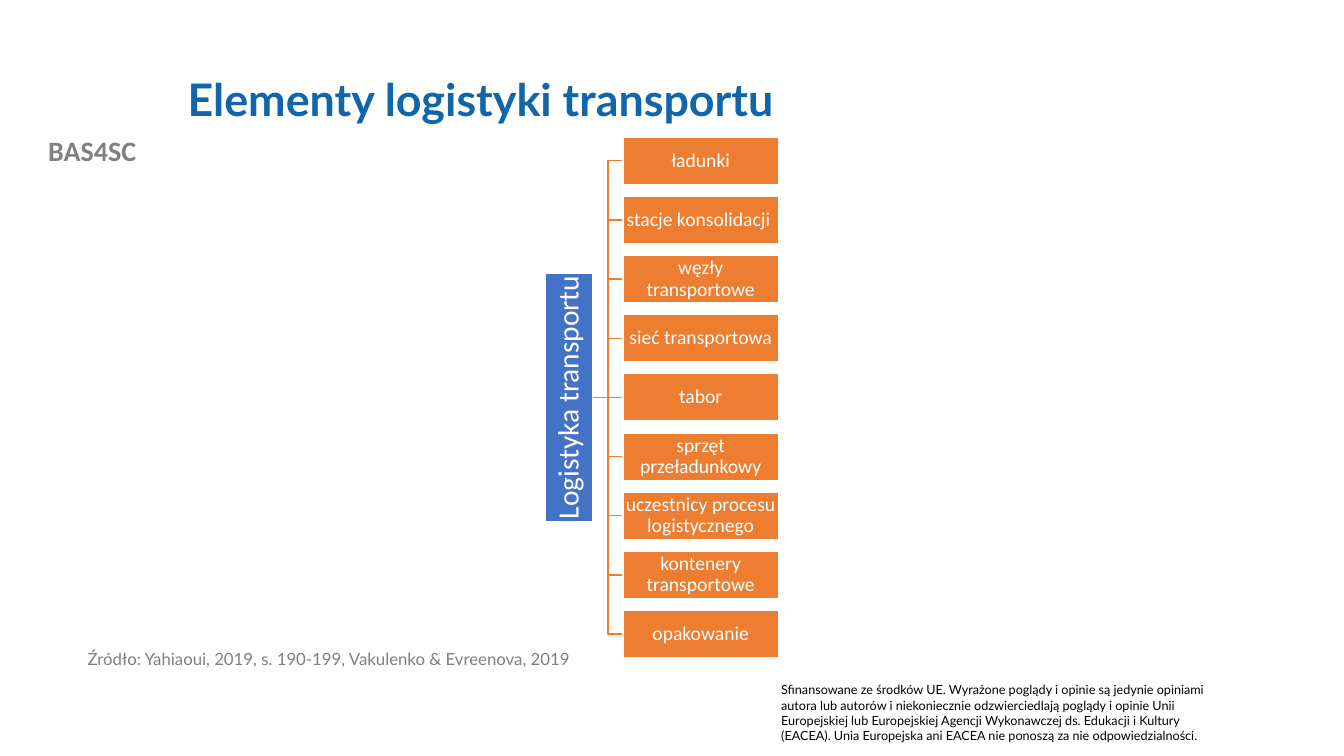
"""Build the slide on the elements of transport logistics."""
import lxml.etree
import pptx
import pptx.dml.color
import pptx.enum.shapes
import pptx.enum.text
import pptx.oxml.ns
import pptx.util

Inches, Pt = pptx.util.Inches, pptx.util.Pt
RGB = pptx.dml.color.RGBColor.from_string
qn = pptx.oxml.ns.qn
SHAPE = pptx.enum.shapes.MSO_SHAPE
CONNECTOR = pptx.enum.shapes.MSO_CONNECTOR
ALIGN = pptx.enum.text.PP_ALIGN
ANCHOR = pptx.enum.text.MSO_ANCHOR

THEME = {
    "root_fill": RGB("4472C4"),
    "branch": RGB("ED7D31"),
    "white": RGB("FFFFFF"),
    "title": {"name": "Lato", "size": Pt(32), "bold": True, "color": RGB("1065AB")},
    "project": {"name": "Calibri", "size": Pt(20), "bold": True, "color": RGB("808080")},
    "source": {"name": "Lato", "size": Pt(12), "color": RGB("7F7F7F")},
    "funding": {"name": "Lato", "size": Pt(9), "color": RGB("000000")},
    "root": {"name": "Calibri", "size": Pt(21), "color": RGB("FFFFFF")},
    "element": {"name": "Calibri", "size": Pt(14), "color": RGB("FFFFFF")},
}
ELEMENTS = [
    "ładunki",
    "stacje konsolidacji ",
    "węzły transportowe",
    "sieć transportowa",
    "tabor",
    "sprzęt przeładunkowy",
    "uczestnicy procesu logistycznego",
    "kontenery transportowe",
    "opakowanie",
]
FUNDING = (
    "Sfinansowane ze środków UE. Wyrażone poglądy i opinie są jedynie opiniami autora "
    "lub autorów i niekoniecznie odzwierciedlają poglądy i opinie Unii Europejskiej lub "
    "Europejskiej Agencji Wykonawczej ds. Edukacji i Kultury (EACEA). Unia Europejska ani "
    "EACEA nie ponoszą za nie odpowiedzialności."
)
BOX_W, BOX_H, ROW = 1.54, 0.47, 5.87 / 10
COLUMN, TOP = 6.18, 1.36
ROOT_LEFT, ROOT_H = 5.41, 2.47
MIDDLE = len(ELEMENTS) // 2
CENTRE = TOP + MIDDLE * ROW + BOX_H / 2


def write(sp, text, style, align=ALIGN.LEFT, anchor=ANCHOR.TOP, spacing=0.9):
    tf = sp.text_frame
    tf.word_wrap = True
    tf.auto_size = pptx.enum.text.MSO_AUTO_SIZE.NONE
    tf.vertical_anchor = anchor
    p = tf.paragraphs[0]
    p.alignment, p.line_spacing = align, spacing
    r = p.add_run()
    r.text = text
    for key, value in THEME[style].items():
        if key == "color":
            r.font.color.rgb = value
        else:
            setattr(r.font, key, value)


def add_box(left, top, width, height, fill, text, style):
    sp = s.shapes.add_shape(SHAPE.RECTANGLE, *map(Inches, (left, top, width, height)))
    sp.shadow.inherit = False
    sp.fill.solid()
    sp.fill.fore_color.rgb = fill
    sp.line.color.rgb = THEME["white"]
    sp.line.width = Pt(1)
    for side in ("left", "top", "right", "bottom"):
        setattr(sp.text_frame, f"margin_{side}", Inches(0.01))
    write(sp, text, style, ALIGN.CENTER, ANCHOR.MIDDLE)
    return sp


prs = pptx.Presentation()
prs.slide_width, prs.slide_height = Inches(13.33), Inches(7.5)
s = prs.slides.add_slide(prs.slide_layouts[5])

title = s.shapes.title
title.left, title.top, title.width, title.height = map(Inches, (1.76, 0.4, 10.66, 1.22))
write(title, "Elementy logistyki transportu", "title", anchor=ANCHOR.MIDDLE)

for place, text, style, align, spacing in [
    ((0, 1.28, 1.83, 0.44), "BAS4SC", "project", ALIGN.CENTER, 1.0),
    ((7.65, 6.72, 4.63, 0.71), FUNDING, "funding", ALIGN.LEFT, 1.0),
    ((0.77, 6.41, 5.6, 0.52),
     "Źródło: Yahiaoui, 2019, s. 190-199, Vakulenko & Evreenova, 2019",
     "source", ALIGN.LEFT, 0.9),
]:
    write(s.shapes.add_textbox(*map(Inches, place)), text, style, align, spacing=spacing)

branches = []
for i in range(len(ELEMENTS)):
    kind = CONNECTOR.STRAIGHT if i == MIDDLE else CONNECTOR.ELBOW
    branch = s.shapes.add_connector(kind, 0, 0, 0, 0)
    branch.line.color.rgb = THEME["branch"]
    branch.line.width = Pt(1)
    lxml.etree.SubElement(branch._element.spPr, qn("a:effectLst"))
    branches.append(branch)

root = add_box(ROOT_LEFT, CENTRE - ROOT_H / 2, BOX_H, ROOT_H, THEME["root_fill"],
               "Logistyka transportu", "root")
root.text_frame.word_wrap = False
root.text_frame._txBody.bodyPr.set("vert", "vert270")

for i, (text, branch) in enumerate(zip(ELEMENTS, branches)):
    box = add_box(COLUMN, TOP + i * ROW, BOX_W, BOX_H, THEME["branch"], text, "element")
    branch.begin_connect(root, 3)
    branch.end_connect(box, 1)

prs.save("out.pptx")
